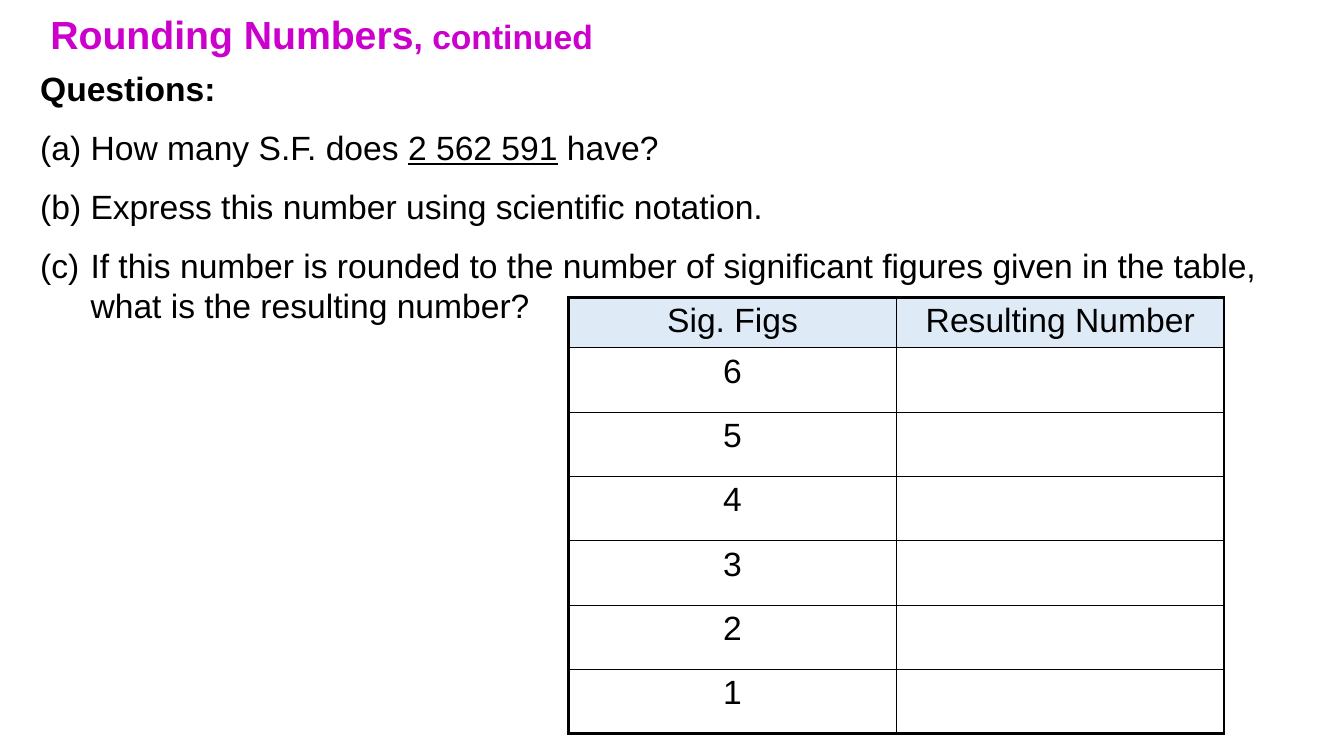
from lxml import etree
from pptx import Presentation
from pptx.dml.color import RGBColor
from pptx.enum.text import MSO_ANCHOR, PP_ALIGN
from pptx.oxml.ns import qn
from pptx.util import Inches, Pt

CENTER = PP_ALIGN.CENTER
MIDDLE = MSO_ANCHOR.MIDDLE
TOP = MSO_ANCHOR.TOP
COLORS = {"title": "CC00CC", "text": "000000", "border": "000000", "header": "DEEBF7"}
QUESTIONS = [
    [("How many S.F. does ", False), ("2 562 591", True), (" have?", False)],
    [("Express this number using scientific notation.", False)],
    [("If this number is rounded to the number of significant figures given "
      "in the table, what is the resulting number?", False)],
]
TABLE_ROWS = [("Sig. Figs", "Resulting Number")] + [(str(n), "") for n in range(6, 0, -1)]


class SlideBuilder:
    font_name = "Arial"
    text_size = 24
    thin, thick = 1, 2.25

    def __init__(self, slide):
        self.slide = slide

    def set_font(self, font, color, bold=False):
        font.name = self.font_name
        font.size = Pt(self.text_size)
        font.bold = bold
        font.color.rgb = RGBColor.from_string(COLORS[color])

    def text_frame(self, left, top, width, height):
        box = self.slide.shapes.add_textbox(
            Inches(left), Inches(top), Inches(width), Inches(height))
        box.text_frame.word_wrap = True
        return box.text_frame

    def title(self, heading, suffix):
        frame = self.text_frame(0, 0.08, 9.85, 0.57)
        frame.margin_left = Inches(0.5)
        frame.vertical_anchor = MIDDLE
        para = frame.paragraphs[0]
        para.line_spacing = 0.9
        self.set_font(para.font, "title", bold=True)
        for text, size in ((heading, 28), (suffix, self.text_size)):
            span = para.add_run()
            span.text = text
            span.font.size = Pt(size)

    def questions(self, heading, questions):
        frame = self.text_frame(0.3, 0.62, 13.03, 2.73)
        para = frame.paragraphs[0]
        para.text = heading
        self.set_font(para.font, "text", bold=True)
        for question in questions:
            para = frame.add_paragraph()
            para.space_before = Pt(13.5)
            self.set_font(para.font, "text")
            self.number(para)
            for text, underlined in question:
                span = para.add_run()
                span.text = text
                span.font.underline = underlined

    def number(self, para):
        """Give the paragraph a hanging (a), (b), (c) label."""
        properties = para._p.get_or_add_pPr()
        properties.set("marL", str(Inches(0.5)))
        properties.set("indent", str(Inches(-0.5)))
        label = etree.Element(qn("a:buAutoNum"), type="alphaLcParenBoth")
        properties.find(qn("a:spcBef")).addnext(label)

    def table(self, rows):
        height, header_height = 4.31, 0.48
        row_height = (height - header_height) / (len(rows) - 1)
        table = self.slide.shapes.add_table(
            len(rows), 2, Inches(5.64), Inches(2.95), Inches(6.5), Inches(height)).table
        table.first_row = table.horz_banding = False
        for row_index, texts in enumerate(rows):
            is_header = row_index == 0
            is_last = row_index == len(rows) - 1
            table.rows[row_index].height = Inches(header_height if is_header else row_height)
            for column_index, text in enumerate(texts):
                cell = table.cell(row_index, column_index)
                self.cell(cell, text, is_header)
                self.borders(cell, {
                    "a:lnL": column_index == 0,
                    "a:lnR": column_index == len(texts) - 1,
                    "a:lnT": is_header,
                    "a:lnB": is_last,
                })

    def cell(self, cell, text, is_header):
        cell.vertical_anchor = TOP
        if is_header:
            cell.fill.solid()
            cell.fill.fore_color.rgb = RGBColor.from_string(COLORS["header"])
        else:
            cell.fill.background()
        para = cell.text_frame.paragraphs[0]
        para.text = text
        para.alignment = CENTER
        self.set_font(para.font, "text")

    def borders(self, cell, sides):
        """Draw the sides of a cell, thick where they lie on the table's edge."""
        properties = cell._tc.get_or_add_tcPr()
        for position, (tag, on_edge) in enumerate(sides.items()):
            width = Pt(self.thick if on_edge else self.thin)
            line = etree.Element(qn(tag), w=str(width))
            fill = etree.SubElement(line, qn("a:solidFill"))
            etree.SubElement(fill, qn("a:srgbClr"), val=COLORS["border"])
            properties.insert(position, line)


def main():
    deck = Presentation()
    deck.slide_width = Inches(13.33)
    deck.slide_height = Inches(7.5)
    page = SlideBuilder(deck.slides.add_slide(deck.slide_layouts[6]))
    page.questions("Questions:", QUESTIONS)
    page.table(TABLE_ROWS)
    page.title("Rounding Numbers", ", continued")
    deck.save("out.pptx")


if __name__ == "__main__":
    main()
